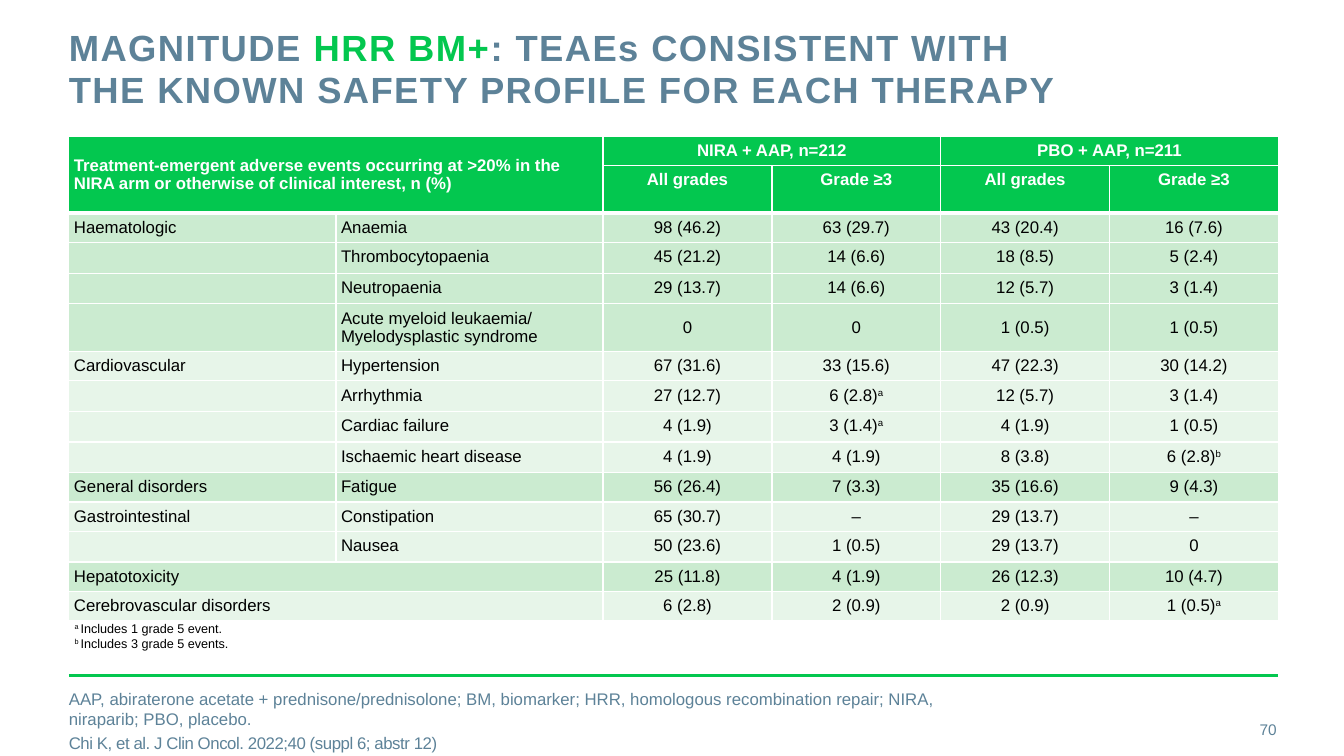
from typing import NamedTuple

import lxml.etree
import pptx
import pptx.dml.color
import pptx.enum.shapes
import pptx.enum.text
import pptx.oxml.ns
import pptx.util

SLIDE_WIDTH, SLIDE_HEIGHT = 13.33, 7.5
GRID_COLUMNS, GRID_ROWS = 16, 9
MARGIN, CONTENT_WIDTH = 0.82, 14.4
GREEN, SLATE, WHITE, BLACK = "03C74F", "5D8298", "FFFFFF", "000000"
BANDS = ("CBEBD0", "E7F5E9")
COLUMN_SPANS = (3.18, 3.18, 2.01, 2.01, 2.01, 2.01)
SINGLE_ROW, DOUBLE_ROW = 0.35, 0.56

LEFT = pptx.enum.text.PP_ALIGN.LEFT
CENTER = pptx.enum.text.PP_ALIGN.CENTER
RIGHT = pptx.enum.text.PP_ALIGN.RIGHT
TOP = pptx.enum.text.MSO_ANCHOR.TOP
MIDDLE = pptx.enum.text.MSO_ANCHOR.MIDDLE


class Area(NamedTuple):
    left: float
    top: float
    width: float
    height: float


class Span(NamedTuple):
    text: str
    color: str = ""
    raised: bool = False
    spacing: float = 0


class Style(NamedTuple):
    size: float
    color: str
    bold: bool = False
    align: pptx.enum.text.PP_ALIGN = LEFT


class Event(NamedTuple):
    name: str
    values: tuple[str, str, str, str]


class Category(NamedTuple):
    name: str
    events: tuple[Event, ...]


CATEGORIES = (
    Category("Haematologic", (
        Event("Anaemia", ("98 (46.2)", "63 (29.7)", "43 (20.4)", "16 (7.6)")),
        Event("Thrombocytopaenia", ("45 (21.2)", "14 (6.6)", "18 (8.5)", "5 (2.4)")),
        Event("Neutropaenia", ("29 (13.7)", "14 (6.6)", "12 (5.7)", "3 (1.4)")),
        Event("Acute myeloid leukaemia/\nMyelodysplastic syndrome", ("0", "0", "1 (0.5)", "1 (0.5)")),
    )),
    Category("Cardiovascular", (
        Event("Hypertension", ("67 (31.6)", "33 (15.6)", "47 (22.3)", "30 (14.2)")),
        Event("Arrhythmia", ("27 (12.7)", "6 (2.8)^a", "12 (5.7)", "3 (1.4)")),
        Event("Cardiac failure", ("4 (1.9)", "3 (1.4)^a", "4 (1.9)", "1 (0.5)")),
        Event("Ischaemic heart disease", ("4 (1.9)", "4 (1.9)", "8 (3.8)", "6 (2.8)^b")),
    )),
    Category("General disorders", (
        Event("Fatigue", ("56 (26.4)", "7 (3.3)", "35 (16.6)", "9 (4.3)")),
    )),
    Category("Gastrointestinal", (
        Event("Constipation", ("65 (30.7)", "–", "29 (13.7)", "–")),
        Event("Nausea", ("50 (23.6)", "1 (0.5)", "29 (13.7)", "0")),
    )),
    Category("Hepatotoxicity", (Event("", ("25 (11.8)", "4 (1.9)", "26 (12.3)", "10 (4.7)")),)),
    Category("Cerebrovascular disorders", (Event("", ("6 (2.8)", "2 (0.9)", "2 (0.9)", "1 (0.5)^a")),)),
)


def rgb(value: str) -> pptx.dml.color.RGBColor:
    return pptx.dml.color.RGBColor.from_string(value)


def across(columns: float) -> pptx.util.Length:
    return pptx.util.Inches(columns * SLIDE_WIDTH / GRID_COLUMNS)


def down(rows: float) -> pptx.util.Length:
    return pptx.util.Inches(rows * SLIDE_HEIGHT / GRID_ROWS)


def place(area: Area) -> tuple[pptx.util.Length, ...]:
    return across(area.left), down(area.top), across(area.width), down(area.height)


def write(frame, lines: list[list[Span]], style: Style) -> None:
    for index, spans in enumerate(lines):
        paragraph = frame.add_paragraph() if index else frame.paragraphs[0]
        paragraph.alignment = style.align
        font = paragraph.font
        font.name, font.size, font.bold = "Arial", pptx.util.Pt(style.size), style.bold
        font.color.rgb = rgb(style.color)
        for span in spans:
            run = paragraph.add_run()
            run.text = span.text
            if span.color:
                run.font.color.rgb = rgb(span.color)
            properties = run._r.get_or_add_rPr()
            if span.raised:
                properties.set("baseline", "30000")
            if span.spacing:
                properties.set("spc", str(round(span.spacing * 100)))


def add_text(slide, area: Area, lines: list[list[Span]], style: Style, anchor=MIDDLE, inset: bool = False):
    frame = slide.shapes.add_textbox(*place(area)).text_frame
    frame.word_wrap = True
    frame.vertical_anchor = anchor
    if not inset:
        frame.margin_left = frame.margin_right = frame.margin_top = frame.margin_bottom = 0
    write(frame, lines, style)
    return frame


def set_borders(cell, top: float = 1, bottom: float = 1) -> None:
    properties = cell._tc.get_or_add_tcPr()
    for index, (side, width) in enumerate((("L", 1), ("R", 1), ("T", top), ("B", bottom))):
        border = lxml.etree.Element(pptx.oxml.ns.qn(f"a:ln{side}"), w=str(pptx.util.Pt(width)))
        fill = lxml.etree.SubElement(border, pptx.oxml.ns.qn("a:solidFill"))
        lxml.etree.SubElement(fill, pptx.oxml.ns.qn("a:srgbClr"), val=WHITE)
        properties.insert(index, border)


def fill_cell(cell, text: str, fill: str, style: Style, anchor=TOP, top: float = 1, bottom: float = 1) -> None:
    cell.fill.solid()
    cell.fill.fore_color.rgb = rgb(fill)
    cell.margin_left = cell.margin_right = cell.margin_top = cell.margin_bottom = pptx.util.Inches(0.05)
    cell.vertical_anchor = anchor
    set_borders(cell, top, bottom)
    if text:
        lines = []
        for line in text.split("\n"):
            value, _, mark = line.partition("^")
            lines.append([Span(value)] + ([Span(mark, raised=True)] if mark else []))
        write(cell.text_frame, lines, style)
    else:
        ending = cell.text_frame.paragraphs[0]._p
        lxml.etree.SubElement(ending, pptx.oxml.ns.qn("a:endParaRPr"), sz=str(style.size * 100))


def add_header(table) -> None:
    style = Style(12, WHITE, True)
    centred = style._replace(align=CENTER)
    arms = ("NIRA + AAP, n=212", "", "PBO + AAP, n=211", "")
    caption = "Treatment-emergent adverse events occurring at >20% in the NIRA arm or otherwise of clinical interest, n (%)"
    rows = ((caption, "", *arms), ("", "", *("All grades", "Grade ≥3") * 2))
    for row, texts in enumerate(rows):
        for column, text in enumerate(texts):
            spans_rows = column < 2
            fill_cell(table.cell(row, column), text, GREEN, style if spans_rows else centred,
                      MIDDLE if spans_rows else TOP, bottom=3 if row or spans_rows else 1)
    table.cell(0, 0).merge(table.cell(1, 1))
    for column in (2, 4):
        table.cell(0, column).merge(table.cell(0, column + 1))


def add_events(slide) -> None:
    heights = [SINGLE_ROW, DOUBLE_ROW] + [
        DOUBLE_ROW if "\n" in event.name else SINGLE_ROW
        for category in CATEGORIES for event in category.events
    ]
    area = Area(MARGIN, 1.62, sum(COLUMN_SPANS), sum(heights))
    table = slide.shapes.add_table(len(heights), len(COLUMN_SPANS), *place(area)).table
    table.first_row = table.horz_banding = False
    for column, span in zip(table.columns, COLUMN_SPANS):
        column.width = across(span)
    for row, height in zip(table.rows, heights):
        row.height = down(height)
    add_header(table)
    label = Style(12, BLACK)
    row = 2
    for number, category in enumerate(CATEGORIES):
        band = BANDS[number % 2]
        for position, event in enumerate(category.events):
            texts = ("" if position else category.name, event.name, *event.values)
            for column, text in enumerate(texts):
                is_value = column > 1
                fill_cell(table.cell(row, column), text, band,
                          label._replace(align=CENTER) if is_value else label,
                          MIDDLE if is_value and "\n" in event.name else TOP,
                          top=3 if row == 2 else 1)
            if not event.name:
                table.cell(row, 0).merge(table.cell(row, 1))
            row += 1


def add_title(slide) -> None:
    title = slide.shapes.title
    title.left, title.top, title.width, title.height = place(Area(MARGIN, 0.32, 11.82, 1.06))
    frame = title.text_frame
    frame.word_wrap = True
    frame.auto_size = pptx.enum.text.MSO_AUTO_SIZE.NONE
    frame.vertical_anchor = TOP
    frame.margin_left = frame.margin_right = frame.margin_top = frame.margin_bottom = 0
    write(frame, [[
        Span("MAGNITUDE ", SLATE, spacing=1),
        Span("HRR BM+", GREEN, spacing=1),
        Span(": TEAEs CONSISTENT WITH THE KNOWN SAFETY PROFILE FOR EACH THERAPY", SLATE, spacing=1),
    ]], Style(26, SLATE, True))
    frame.paragraphs[0].line_spacing = pptx.util.Pt(30)


def add_footer(slide) -> None:
    rule = slide.shapes.add_connector(
        pptx.enum.shapes.MSO_CONNECTOR.STRAIGHT,
        across(MARGIN), down(8.04), across(MARGIN + CONTENT_WIDTH), down(8.04))
    rule.line.color.rgb = rgb(GREEN)
    rule.line.width = pptx.util.Pt(2)
    lxml.etree.SubElement(rule._element.spPr, pptx.oxml.ns.qn("a:effectLst"))
    add_text(slide, Area(14.17, 8.44, 1.03, 0.48), [[Span("70")]], Style(11, SLATE, align=RIGHT))
    references = add_text(slide, Area(MARGIN, 8.34, 10.66, 0.48), [
        [Span("AAP, abiraterone acetate + prednisone/prednisolone; BM, biomarker; HRR, homologous "
              "recombination repair; NIRA, niraparib; PBO, placebo.")],
        [Span("Chi K, et al. J Clin Oncol. 2022;40 (suppl 6; abstr 12)", spacing=-0.3)],
    ], Style(12, SLATE))
    references.paragraphs[1].space_before = pptx.util.Pt(3)
    add_text(slide, Area(0.77, 7.33, 15.23, 0.76), [
        [Span("a ", raised=True), Span("Includes 1 grade 5 event.")],
        [Span("b ", raised=True), Span("Includes 3 grade 5 events.")],
    ], Style(9, BLACK), TOP, inset=True)


def main() -> None:
    presentation = pptx.Presentation()
    presentation.slide_width = pptx.util.Inches(SLIDE_WIDTH)
    presentation.slide_height = pptx.util.Inches(SLIDE_HEIGHT)
    slide = presentation.slides.add_slide(presentation.slide_layouts.get_by_name("Title Only"))
    add_title(slide)
    add_events(slide)
    add_footer(slide)
    presentation.save("out.pptx")


if __name__ == "__main__":
    main()
